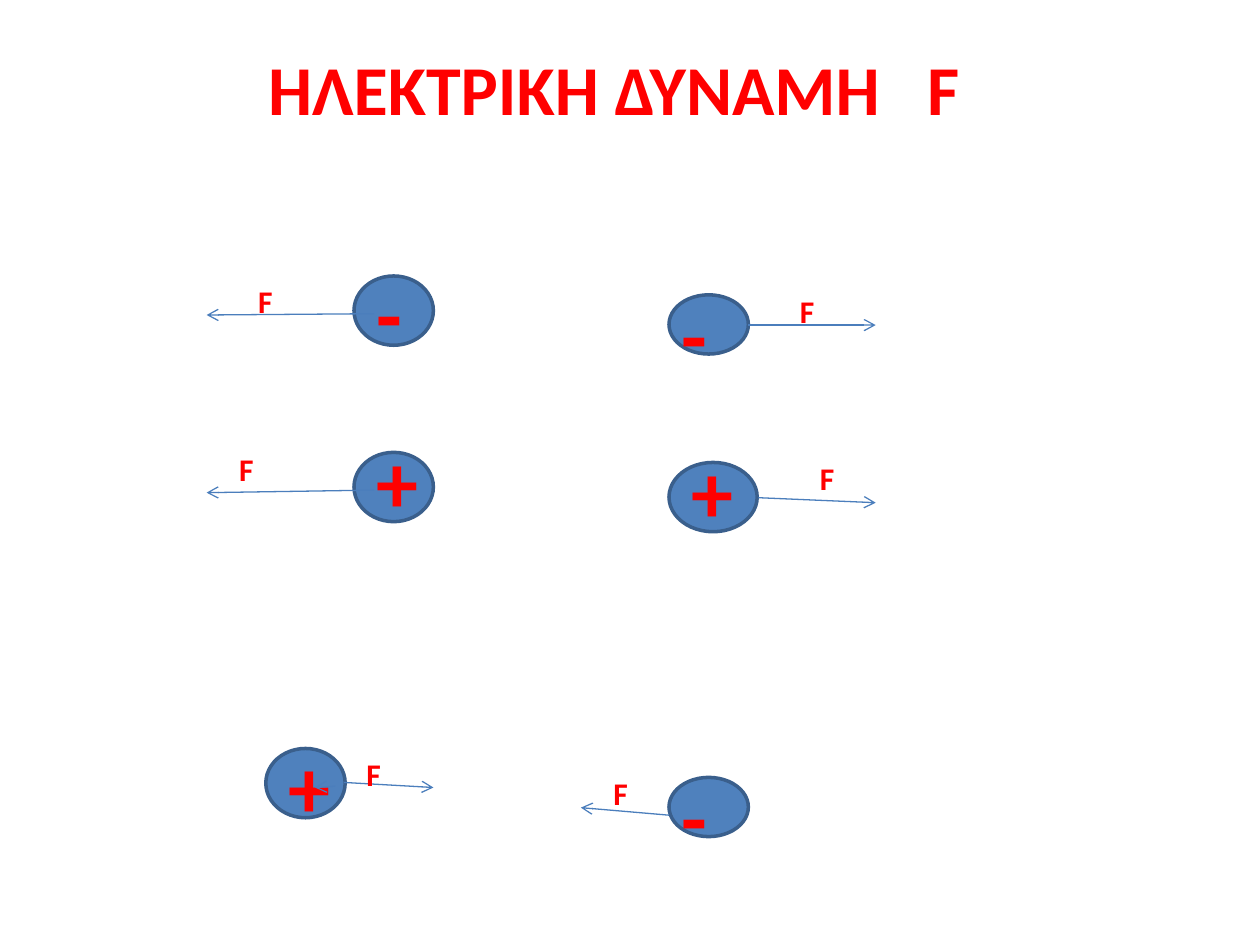
from dataclasses import dataclass

from lxml.etree import SubElement
from pptx import Presentation
from pptx.dml.color import RGBColor
from pptx.enum.shapes import MSO_CONNECTOR, MSO_SHAPE
from pptx.enum.text import MSO_AUTO_SIZE
from pptx.oxml.ns import qn
from pptx.slide import Slide
from pptx.util import Inches, Pt

COLORS = {"text": "FF0000", "charge": "4F81BD", "outline": "3A5F8C", "arrow": "4B7EBC"}
FONT = "Calibri"
MARK_WIDTH, SIGN_HEIGHT, LABEL_HEIGHT = 0.47, 0.91, 0.4

Point = tuple[float, float]


@dataclass(frozen=True)
class Charge:
    """A charged body with its sign and the force acting on it, in inches."""
    sign: str
    body_at: Point
    body_size: Point
    sign_at: Point
    force_from: Point
    force_to: Point
    label_at: Point


CHARGES = [
    Charge("-", (2.81, 2.19), (0.63, 0.55), (2.89, 2.03), (2.97, 2.49), (1.64, 2.5), (1.95, 2.19)),
    Charge("-", (5.31, 2.34), (0.63, 0.47), (5.31, 2.19), (5.94, 2.58), (6.95, 2.58), (6.25, 2.27)),
    Charge("+", (2.81, 3.59), (0.63, 0.55), (2.89, 3.36), (2.97, 3.89), (1.64, 3.91), (1.8, 3.52)),
    Charge("+", (5.31, 3.67), (0.7, 0.55), (5.39, 3.44), (6.02, 3.95), (6.95, 3.99), (6.41, 3.59)),
    Charge("+", (2.11, 5.94), (0.63, 0.55), (2.19, 5.78), (2.73, 6.21), (3.44, 6.25), (2.81, 5.94)),
    Charge("-", (5.31, 6.17), (0.63, 0.47), (5.31, 6.02), (5.31, 6.47), (4.61, 6.41), (4.77, 6.09)),
]


def color(name: str) -> RGBColor:
    return RGBColor.from_string(COLORS[name])


def add_text(slide: Slide, text: str, at: Point, size: Point, points: float) -> None:
    shape = slide.shapes.add_textbox(*map(Inches, at + size))
    text_frame = shape.text_frame
    text_frame.word_wrap = True
    text_frame.auto_size = MSO_AUTO_SIZE.SHAPE_TO_FIT_TEXT
    text_frame.text = text
    font = text_frame.paragraphs[0].runs[0].font
    font.name, font.size, font.bold = FONT, Pt(points), True
    font.color.rgb = color("text")


def add_body(slide: Slide, at: Point, size: Point) -> None:
    shape = slide.shapes.add_shape(MSO_SHAPE.OVAL, *map(Inches, at + size))
    shape.shadow.inherit = False
    shape.fill.solid()
    shape.fill.fore_color.rgb = color("charge")
    shape.line.color.rgb = color("outline")
    shape.line.width = Pt(2)


def add_arrow(slide: Slide, start: Point, end: Point) -> None:
    connector = slide.shapes.add_connector(MSO_CONNECTOR.STRAIGHT, *map(Inches, start + end))
    connector.line.color.rgb = color("arrow")
    connector.line.width = Pt(0.75)
    properties = connector._element.spPr
    SubElement(properties.find(qn("a:ln")), qn("a:tailEnd"), type="arrow")
    SubElement(properties, qn("a:effectLst"))


def add_charge(slide: Slide, charge: Charge) -> None:
    add_body(slide, charge.body_at, charge.body_size)
    add_arrow(slide, charge.force_from, charge.force_to)
    add_text(slide, charge.sign, charge.sign_at, (MARK_WIDTH, SIGN_HEIGHT), 48)
    add_text(slide, "F", charge.label_at, (MARK_WIDTH, LABEL_HEIGHT), 18)


def main() -> None:
    presentation = Presentation()
    presentation.slide_width, presentation.slide_height = Inches(10), Inches(7.5)
    slide = presentation.slides.add_slide(presentation.slide_layouts[6])
    add_text(slide, "ΗΛΕΚΤΡΙΚΗ ΔΥΝΑΜΗ   F", (2.03, 0.31), (6.56, 0.77), 40)
    for charge in CHARGES:
        add_charge(slide, charge)
    # Short arrow inside the lower positive charge
    add_arrow(slide, (2.66, 6.24), (2.5, 6.25))
    presentation.save("out.pptx")


if __name__ == "__main__":
    main()
